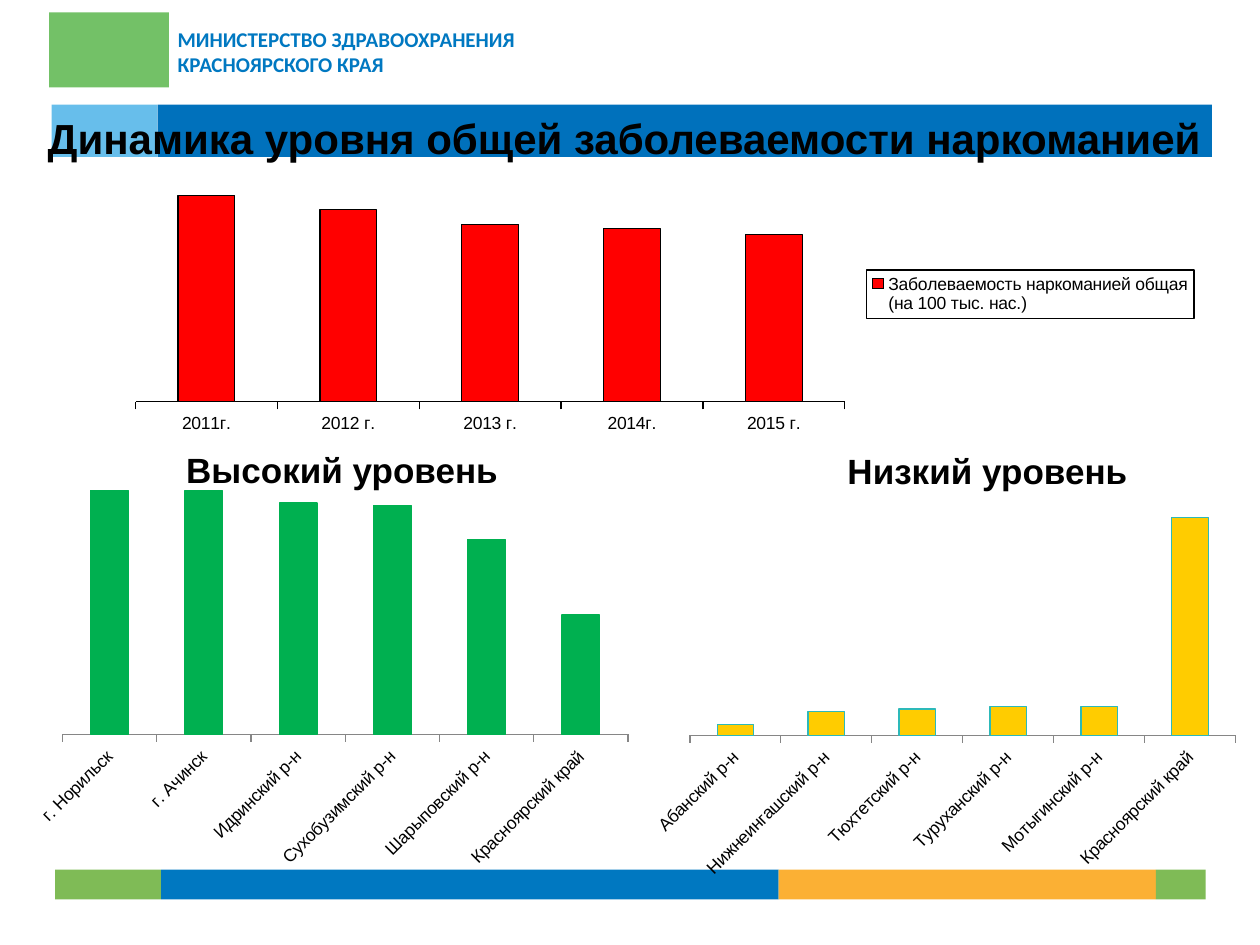
"""Build a slide on drug addiction rates: yearly totals above the highest and lowest districts."""
from lxml import etree
from pptx import Presentation
from pptx import util as u
from pptx.chart import data as chart_data
from pptx.dml import color
from pptx.enum import chart as charts, shapes, text
from pptx.oxml import ns

COLORS = {
    "black": "000000", "gray": "868686", "red": "FF0000", "emerald": "00B050",
    "yellow": "FFCC00", "teal": "2DB9B9", "sky": "67BEEB", "navy": "0071BC",
    "blue": "0078C1", "orange": "FBB034", "leaf": "7FBB56", "green": "73C167",
}
TITLE = "Динамика уровня общей заболеваемости наркоманией"
MINISTRY = "МИНИСТЕРСТВО ЗДРАВООХРАНЕНИЯ\vКРАСНОЯРСКОГО КРАЯ"
HEADINGS = [
    ("Низкий уровень", (462.5, 253.5, 203.5, 28)),
    ("Высокий уровень", (82, 252.5, 227, 34.5)),
]
EMBLEM = ("green", 28, 7, 68.5, 43)
HEADER = {"top": 59.75, "height": 30, "bands": [("sky", 29.5, 90), ("navy", 90, 692.5)]}
FOOTER = {"top": 497, "height": 17, "bands": [
    ("leaf", 31.5, 92), ("blue", 92, 445), ("orange", 445, 660.5), ("leaf", 660.5, 689),
]}
CHARTS = [
    {
        "box": (65, 87, 623.5, 164), "plot": (0.02, 0.15, 0.65, 0.72),
        "legend": (0.69, 0.41, 0.3, 0.17), "rotation": 0,
        "name": "Заболеваемость наркоманией общая (на 100 тыс. нас.)",
        "fill": "red", "line": "black", "axis": "black",
        "values": {"2011г.": 100, "2012 г.": 93, "2013 г.": 86, "2014г.": 84, "2015 г.": 81},
    },
    {
        "box": (14.5, 264, 351.5, 236), "plot": (0.06, 0.07, 0.92, 0.59),
        "legend": None, "rotation": -45, "name": "Высокий уровень",
        "fill": "emerald", "line": "emerald", "axis": "gray",
        "values": {"г. Норильск": 100, "г. Ачинск": 100, "Идринский р-н": 95,
                   "Сухобузимский р-н": 94, "Шарыповский р-н": 80, "Красноярский край": 49},
    },
    {
        "box": (366.5, 264, 346.5, 244), "plot": (0.08, 0.13, 0.9, 0.51),
        "legend": None, "rotation": -45, "name": "Низкий уровень",
        "fill": "yellow", "line": "teal", "axis": "gray",
        "values": {"Абанский р-н": 5, "Нижнеингашский р-н": 11, "Тюхтетский р-н": 12,
                   "Туруханский р-н": 13, "Мотыгинский р-н": 13, "Красноярский край": 100},
    },
]


def rgb(name):
    return color.RGBColor.from_string(COLORS[name])


def points(box):
    return [u.Pt(length) for length in box]


def write(shape, content, size=20, font="Arial", fill="black", align="CENTER", inset=(7.2, 3.6)):
    frame = shape.text_frame
    frame.text = content
    frame.word_wrap = True
    frame.auto_size = text.MSO_AUTO_SIZE.NONE
    frame.vertical_anchor = text.MSO_ANCHOR.TOP
    frame.margin_left = frame.margin_right = u.Pt(inset[0])
    frame.margin_top = frame.margin_bottom = u.Pt(inset[1])
    paragraph = frame.paragraphs[0]
    paragraph.alignment = text.PP_ALIGN[align]
    for run in paragraph.runs:
        run.font.size = u.Pt(size)
        run.font.name = font
        run.font.bold = True
        run.font.color.rgb = rgb(fill)


def add_block(slide, fill, *box):
    shape = slide.shapes.add_shape(shapes.MSO_SHAPE.RECTANGLE, *points(box))
    shape.shadow.inherit = False
    shape.fill.solid()
    shape.fill.fore_color.rgb = rgb(fill)
    shape.line.fill.background()


def add_strip(slide, strip):
    for fill, left, right in strip["bands"]:
        add_block(slide, fill, left, strip["top"], right - left, strip["height"])


def set_layout(parent, box, inner=False):
    """Place a chart part by fractions of the chart area."""
    for old in parent.findall(ns.qn("c:layout")):
        parent.remove(old)
    layout = etree.Element(ns.qn("c:layout"))
    manual = etree.SubElement(layout, ns.qn("c:manualLayout"))
    settings = [("layoutTarget", "inner")] if inner else []
    settings += [("xMode", "edge"), ("yMode", "edge"), *zip("xywh", box)]
    for tag, value in settings:
        etree.SubElement(manual, ns.qn(f"c:{tag}")).set("val", str(value))
    parent.insert(0 if inner else 1, layout)


def add_legend(chart, box):
    chart.has_legend = True
    legend = chart.legend
    legend.position = charts.XL_LEGEND_POSITION.RIGHT
    legend.include_in_layout = True
    legend.font.size = u.Pt(10)
    set_layout(legend._element, box)
    properties = etree.Element(ns.qn("c:spPr"))
    line = etree.SubElement(properties, ns.qn("a:ln"), w="9525")
    solid = etree.SubElement(line, ns.qn("a:solidFill"))
    etree.SubElement(solid, ns.qn("a:srgbClr"), val=COLORS["black"])
    legend._element.find(ns.qn("c:overlay")).addnext(properties)


def add_column_chart(slide, item):
    values = chart_data.CategoryChartData()
    values.categories = list(item["values"])
    values.add_series(item["name"], list(item["values"].values()))
    chart = slide.shapes.add_chart(
        charts.XL_CHART_TYPE.COLUMN_CLUSTERED, *points(item["box"]), values).chart
    chart.has_title = False
    chart.has_legend = False
    chart.font.size = u.Pt(10)
    chart.font.name = "Arial"
    chart.font.color.rgb = rgb("black")

    plot = chart.plots[0]
    plot.gap_width = 150
    plot.vary_by_categories = False
    bars = plot.series[0].format
    bars.fill.solid()
    bars.fill.fore_color.rgb = rgb(item["fill"])
    bars.line.color.rgb = rgb(item["line"])
    bars.line.width = u.Pt(0.75)

    scale = chart.value_axis
    scale.minimum_scale, scale.maximum_scale = 0, 100
    scale.has_major_gridlines = False
    scale.visible = False
    axis = chart.category_axis
    axis.format.line.color.rgb = rgb(item["axis"])
    axis.major_tick_mark = charts.XL_TICK_MARK.OUTSIDE
    axis.tick_labels.font.size = u.Pt(10)
    body = axis._element.find(ns.qn("c:txPr")).find(ns.qn("a:bodyPr"))
    body.set("rot", str(item["rotation"] * 60000))
    body.set("vert", "horz")

    set_layout(chart._chartSpace.chart.plotArea, item["plot"], inner=True)
    if item["legend"]:
        add_legend(chart, item["legend"])


def main():
    presentation = Presentation()
    presentation.slide_width, presentation.slide_height = u.Pt(720), u.Pt(540)
    slide = presentation.slides.add_slide(presentation.slide_layouts[5])
    add_strip(slide, HEADER)
    add_strip(slide, FOOTER)
    add_block(slide, *EMBLEM)
    ministry = slide.shapes.add_textbox(*points((101.5, 15, 374.5, 29)))
    write(ministry, MINISTRY, size=12, font="Calibri", fill="blue", align="LEFT", inset=(0, 0))
    for item in CHARTS:
        add_column_chart(slide, item)
    for heading, box in HEADINGS:
        write(slide.shapes.add_textbox(*points(box)), heading)
    title = slide.shapes.title
    title.left, title.top, title.width, title.height = points((20, 60.5, 686, 36))
    write(title, TITLE, size=24, align="LEFT")
    slide.shapes._spTree.append(title._element)
    presentation.save("out.pptx")


if __name__ == "__main__":
    main()
